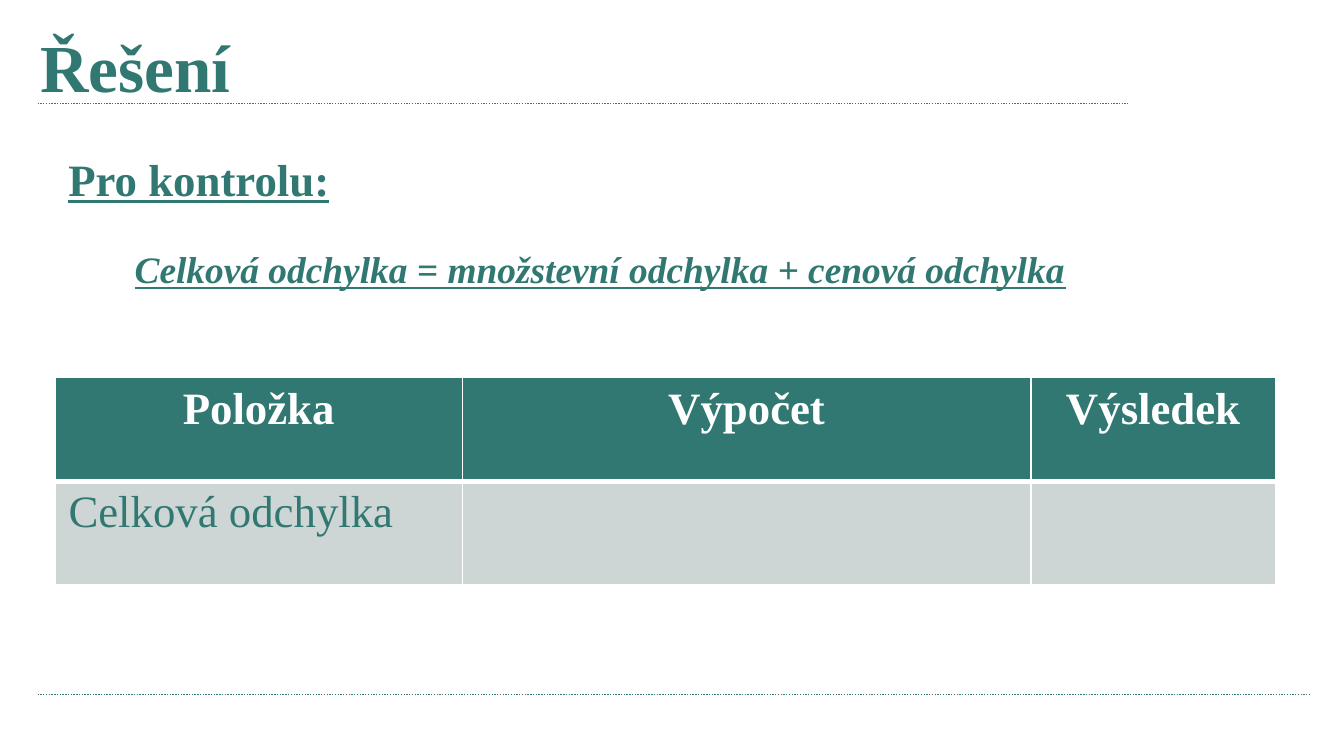
import pptx
import pptx.util
import pptx.dml.color
import pptx.enum.dml
import pptx.enum.shapes
import pptx.enum.text
import pptx.oxml
import pptx.oxml.ns
import lxml.etree

Inches = pptx.util.Inches
Pt = pptx.util.Pt
RGB = pptx.dml.color.RGBColor.from_string
qn = pptx.oxml.ns.qn
ALIGN = pptx.enum.text.PP_ALIGN
ANCHOR = pptx.enum.text.MSO_ANCHOR

THEME = {
    "font": "Times New Roman",
    "teal": "307871", "pale": "CDD6D5", "white": "FFFFFF",
    "title": 36, "body": 24, "formula": 20,
}


def style(p, size, color, bold=True, italic=None, underline=None):
    for r in p.runs:
        r.font.name = THEME["font"]
        r.font.size = Pt(THEME[size])
        r.font.color.rgb = RGB(THEME[color])
        r.font.bold = bold
        r.font.italic = italic
        r.font.underline = underline


def set_borders(cell, widths):
    tcPr = cell._tc.get_or_add_tcPr()
    for i, (side, width) in enumerate(widths.items()):
        ln = lxml.etree.Element(qn("a:" + side), w=str(Pt(width)))
        fill = lxml.etree.SubElement(ln, qn("a:solidFill"))
        lxml.etree.SubElement(fill, qn("a:srgbClr"), val=THEME["white"])
        tcPr.insert(i, ln)


prs = pptx.Presentation()
prs.slide_width = Inches(10)
prs.slide_height = Inches(10 * 9 / 16)
s = prs.slides.add_slide(prs.slide_layouts[6])

for right, y in [(8.39, 0.77), (9.75, 5.17)]:
    rule = s.shapes.add_connector(
        pptx.enum.shapes.MSO_CONNECTOR.STRAIGHT,
        Inches(0.28), Inches(y), Inches(right), Inches(y))
    rule.line.color.rgb = RGB(THEME["teal"])
    rule.line.width = Pt(0.75)
    rule.line.dash_style = pptx.enum.dml.MSO_LINE.ROUND_DOT
    lxml.etree.SubElement(rule._element.spPr, qn("a:effectLst"))

title = s.shapes.add_textbox(Inches(0.2), Inches(0.14), Inches(8.82), Inches(0.79))
tf = title.text_frame
tf.word_wrap = True
tf.vertical_anchor = ANCHOR.MIDDLE
tf.margin_bottom = Inches(0.15)
tf.text = "Řešení"
style(tf.paragraphs[0], "title", "teal")

body = s.shapes.add_textbox(Inches(0.41), Inches(1.08), Inches(8.11), Inches(3.26))
tf = body.text_frame
tf.word_wrap = True
tf.text = "Pro kontrolu:"
style(tf.paragraphs[0], "body", "teal", underline=True)
p = tf.add_paragraph()
p.text = "Celková odchylka = množstevní odchylka + cenová odchylka"
p.alignment = ALIGN.CENTER
p.space_before = Pt(22)
style(p, "formula", "teal", italic=True, underline=True)

rows = [["Položka", "Výpočet", "Výsledek"], ["Celková odchylka", "", ""]]
widths = [3.03, 4.23, 1.82]
table = s.shapes.add_table(
    len(rows), len(widths), Inches(0.41), Inches(2.81),
    Inches(sum(widths)), Inches(1.54)).table
for col, width in zip(table.columns, widths):
    col.width = Inches(width)
for i, row in enumerate(rows):
    header = i == 0
    table.rows[i].height = Inches(0.77)
    for j, text in enumerate(row):
        cell = table.cell(i, j)
        cell.text = text
        cell.fill.solid()
        cell.fill.fore_color.rgb = RGB(THEME["teal" if header else "pale"])
        p = cell.text_frame.paragraphs[0]
        p.alignment = ALIGN.CENTER if header else ALIGN.LEFT
        style(p, "body", "white" if header else "teal", bold=header)
        set_borders(cell, {"lnL": 1, "lnR": 1,
                           "lnT": 1 if header else 3,
                           "lnB": 3 if header else 1})

prs.save("out.pptx")
